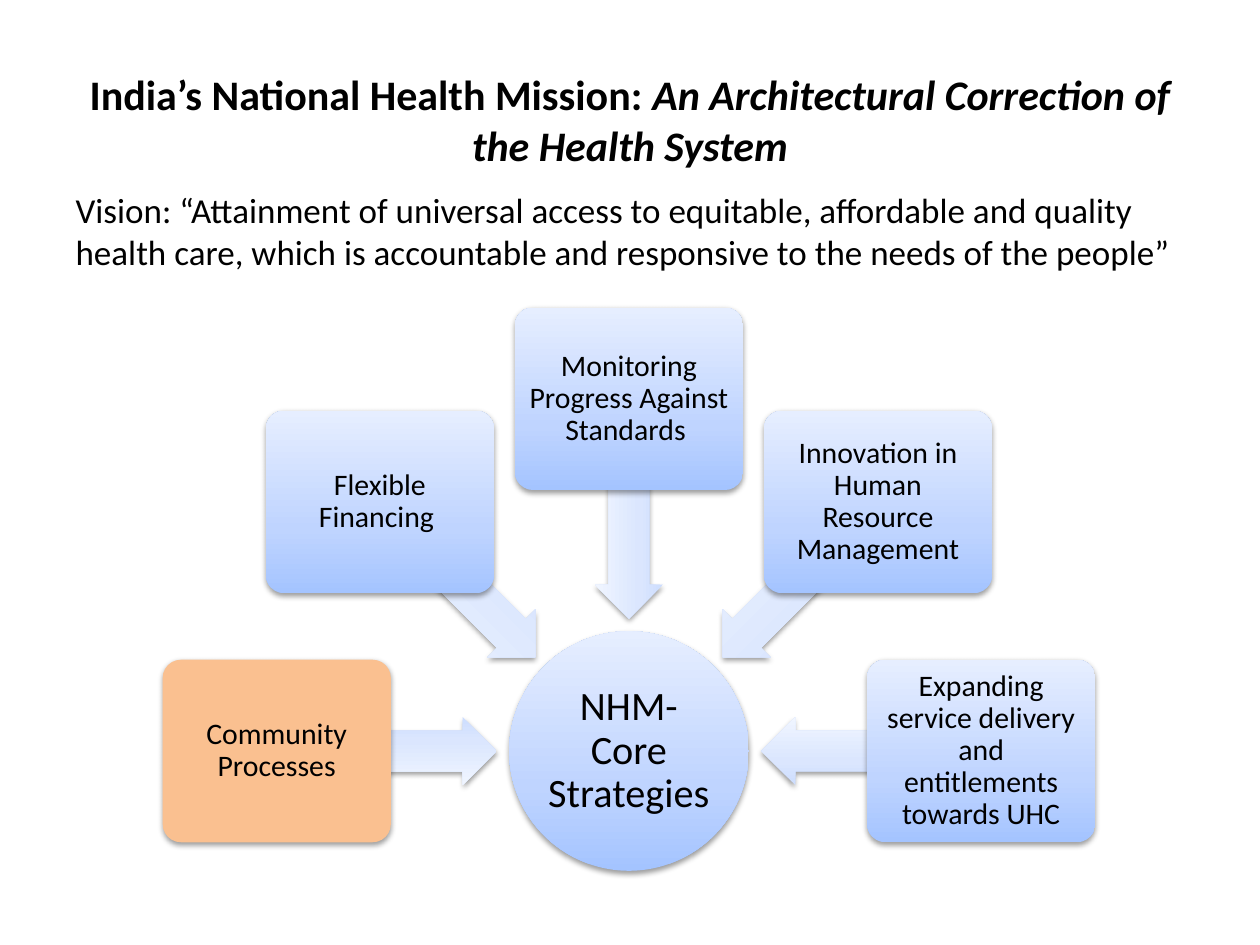
from copy import deepcopy
from math import cos, radians, sin

from lxml.etree import SubElement
from pptx import Presentation
from pptx.dml.color import RGBColor
from pptx.enum.shapes import MSO_SHAPE
from pptx.enum.text import MSO_ANCHOR, MSO_AUTO_SIZE, PP_ALIGN
from pptx.oxml.ns import qn
from pptx.util import Cm, Pt

DARK_BLUES = ["A4C4FF", "BFD4FF", "E6EEFF"]
PALE_BLUES = ["CDDDFE", "DBE6FE", "F0F5FF"]
ORANGE = ["FAC090"]
CENTRE_X, CENTRE_Y = 12.68, 15.14
BOX_ORBIT, ARROW_ORBIT = 7.1, 4.88

deck = Presentation()
deck.slide_width, deck.slide_height = Cm(25.4), Cm(19.05)
page = deck.slides.add_slide(deck.slide_layouts[1])


def write(shape, text, size, align, inset=None):
    """Fill a shape or placeholder with one black Calibri paragraph."""
    frame = shape.text_frame
    frame.text = text
    frame.word_wrap = True
    frame.auto_size = MSO_AUTO_SIZE.NONE
    if inset is not None:
        frame.vertical_anchor = MSO_ANCHOR.MIDDLE
        frame.margin_left = frame.margin_right = Cm(inset)
        frame.margin_top = frame.margin_bottom = Cm(inset)
        frame.paragraphs[0].line_spacing = 0.9
    para = frame.paragraphs[0]
    para.alignment = align
    for span in para.runs:
        span.font.name, span.font.size = "Calibri", Pt(size)
        span.font.color.rgb = RGBColor.from_string("000000")
    return para


def add_diagram_shape(kind, angle, orbit, width, height, colours):
    """Centre a soft-shadowed shape on a circle round the hub."""
    x = CENTRE_X + orbit * cos(radians(angle))
    y = CENTRE_Y + orbit * sin(radians(angle))
    shape = page.shapes.add_shape(kind, Cm(x - width / 2), Cm(y - height / 2),
                                  Cm(width), Cm(height))
    shape.line.fill.background()
    if len(colours) == 1:
        shape.fill.solid()
        shape.fill.fore_color.rgb = RGBColor.from_string(colours[0])
    else:
        shape.fill.gradient()
        shape.fill.gradient_angle = 90
        stops = shape._element.spPr.find(".//" + qn("a:gsLst"))
        stops.append(deepcopy(stops[-1]))
        for stop, colour, position in zip(shape.fill.gradient_stops, colours, (0, 0.35, 1)):
            stop.color.rgb = RGBColor.from_string(colour)
            stop.position = position
    shape.shadow.inherit = False
    effects = shape._element.spPr.find(qn("a:effectLst"))
    shadow = SubElement(effects, qn("a:outerShdw"), blurRad="40000", dist="20000",
                        dir="5400000", rotWithShape="0")
    black = SubElement(shadow, qn("a:srgbClr"), val="000000")
    SubElement(black, qn("a:alpha"), val="38000")
    return shape


# Title and vision
title = page.shapes.title
title.left, title.top, title.width, title.height = Cm(1.27), Cm(0.56), Cm(22.86), Cm(3.68)
para = write(title, "India’s National Health Mission: ", 24, PP_ALIGN.CENTER)
subtitle = para.add_run()
subtitle.text = "An Architectural Correction of the Health System"
subtitle.font.italic = True
for span in para.runs:
    span.font.name, span.font.size, span.font.bold = "Calibri", Pt(24), True
    span.font.color.rgb = RGBColor.from_string("000000")

vision = page.placeholders[1]
vision.left, vision.top, vision.width, vision.height = Cm(1.27), Cm(3.68), Cm(22.58), Cm(2.51)
para = write(vision, "Vision: “Attainment of universal access to equitable, affordable and "
             "quality health care, which is accountable and responsive to the needs of "
             "the people”", 20, PP_ALIGN.LEFT)
properties = para._p.get_or_add_pPr()
properties.set("marL", "0")
properties.set("indent", "0")
SubElement(properties, qn("a:buNone"))

# Hub with five strategies on a half circle
hub = add_diagram_shape(MSO_SHAPE.OVAL, 0, 0, 4.83, 4.83, DARK_BLUES)
write(hub, "NHM-Core Strategies", 23, PP_ALIGN.CENTER, 0.05)

strategies = [
    ("Community Processes", ORANGE),
    ("Flexible Financing ", DARK_BLUES),
    ("Monitoring Progress Against Standards ", DARK_BLUES),
    ("Innovation in Human Resource Management", DARK_BLUES),
    ("Expanding service delivery and entitlements towards UHC", DARK_BLUES),
]
for index, (text, colours) in enumerate(strategies):
    angle = 180 + 45 * index
    arrow = add_diagram_shape(MSO_SHAPE.LEFT_ARROW, angle, ARROW_ORBIT, 4.42, 1.37, PALE_BLUES)
    arrow.rotation = angle % 360
    arrow.adjustments[0], arrow.adjustments[1] = 0.6, 0.5
    box = add_diagram_shape(MSO_SHAPE.ROUNDED_RECTANGLE, angle, BOX_ORBIT, 4.6, 3.68, colours)
    box.adjustments[0] = 0.1
    write(box, text, 17, PP_ALIGN.CENTER, 0.12)

deck.save("out.pptx")
